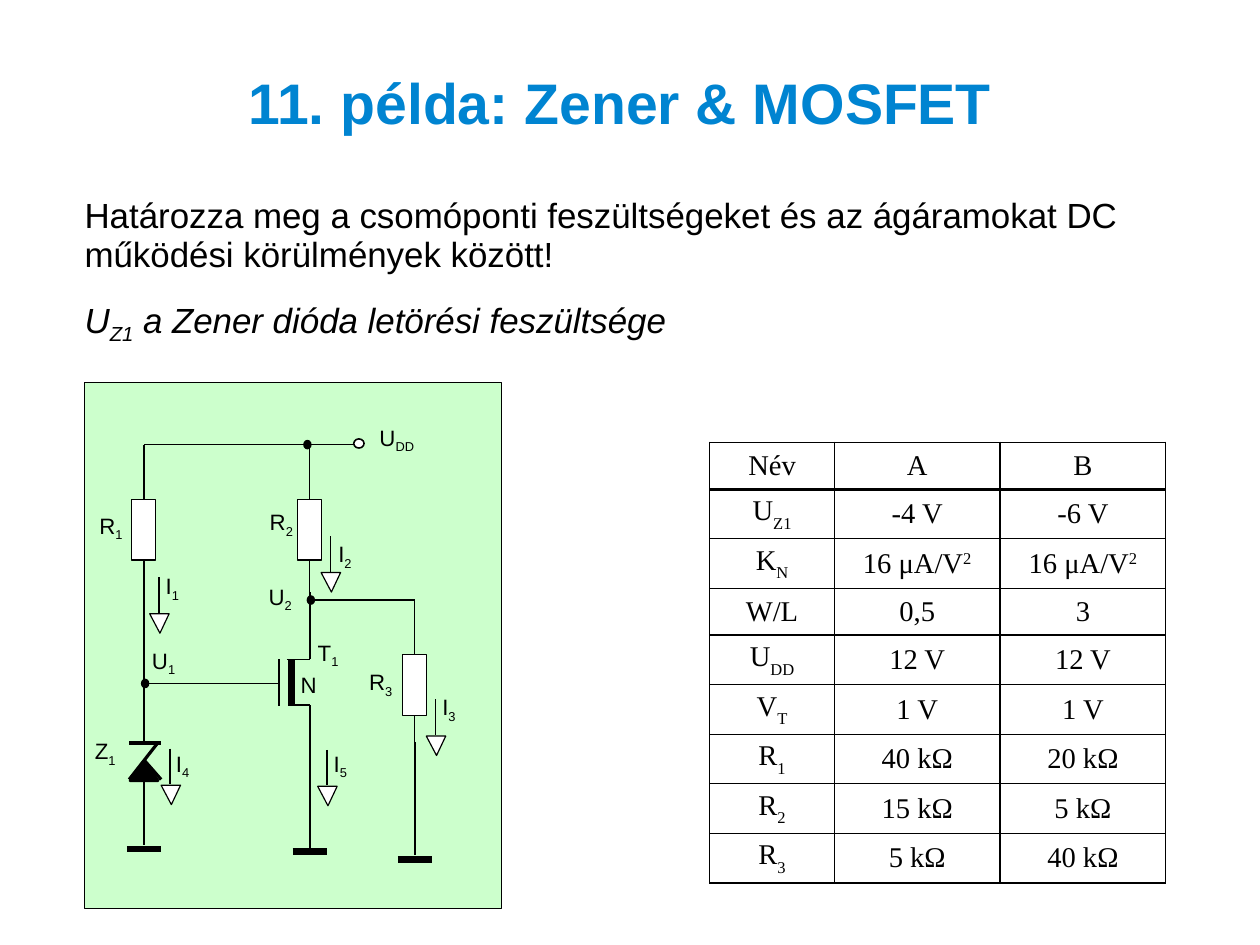
import lxml.etree
import pptx
import pptx.dml.color
import pptx.enum.shapes
import pptx.enum.text
import pptx.oxml.ns
import pptx.util

Inches = pptx.util.Inches
Pt = pptx.util.Pt
SHAPES = pptx.enum.shapes.MSO_SHAPE
CENTER = pptx.enum.text.PP_ALIGN.CENTER
MIDDLE = pptx.enum.text.MSO_ANCHOR.MIDDLE
BLACK, WHITE = "000000", "FFFFFF"


def color(hex_text):
    return pptx.dml.color.RGBColor.from_string(hex_text)


def write(paragraph, markup, size, font="Arial", ink=BLACK, shift=25):
    """Parts are split by |; a leading _ lowers a part and ^ raises it."""
    for part in markup.split("|"):
        run = paragraph.add_run()
        run.text = part.lstrip("_^")
        run.font.size = Pt(size)
        run.font.name = font
        run.font.color.rgb = color(ink)
        if part[0] in "_^":
            percent = -shift if part[0] == "_" else shift
            run.font._element.set("baseline", str(percent * 1000))


def set_insets(text_frame, inset, top=None):
    text_frame.margin_left = text_frame.margin_right = Inches(inset)
    text_frame.margin_bottom = Inches(inset)
    text_frame.margin_top = Inches(inset if top is None else top)
    text_frame.word_wrap = True


def paint(shape, fill, weight):
    shape.shadow.inherit = False
    shape.fill.solid()
    shape.fill.fore_color.rgb = color(fill)
    shape.line.color.rgb = color(BLACK)
    shape.line.width = Pt(weight)


def add_title(slide, left, top, width, height):
    title = slide.shapes.title
    title.left, title.top = Inches(left), Inches(top)
    title.width, title.height = Inches(width), Inches(height)
    set_insets(title.text_frame, 0)
    title.text_frame.vertical_anchor = MIDDLE
    paragraph = title.text_frame.paragraphs[0]
    paragraph.alignment = CENTER
    paragraph.line_spacing = 0.93
    write(paragraph, "11. példa: Zener & MOSFET", 36, ink="0084D1")
    paragraph.runs[0].font.bold = True


def add_task(slide, left, top, width, height):
    box = slide.shapes.add_textbox(Inches(left), Inches(top), Inches(width), Inches(height))
    frame = box.text_frame
    set_insets(frame, 0, top=0.03)
    question = frame.paragraphs[0]
    write(question, "Határozza meg a csomóponti feszültségeket és az ágáramokat "
                    "DC működési körülmények között!", 22)
    remark = frame.add_paragraph()
    write(remark, "U|_Z1| a Zener dióda letörési feszültsége", 22)
    for run in remark.runs:
        run.font.italic = True
    for paragraph in frame.paragraphs:
        paragraph.line_spacing = 0.93
        paragraph.space_after = Pt(14.2)


def add_circuit(slide, left, top, width, height):
    shapes = slide.shapes

    def block(kind, x, y, w, h, fill, weight):
        shape = shapes.add_shape(kind, Inches(left + x), Inches(top + y), Inches(w), Inches(h))
        paint(shape, fill, weight)

    def wire(x1, y1, x2, y2, weight=1):
        line = shapes.add_connector(pptx.enum.shapes.MSO_CONNECTOR.STRAIGHT,
                                    Inches(left + x1), Inches(top + y1),
                                    Inches(left + x2), Inches(top + y2))
        line.line.color.rgb = color(BLACK)
        line.line.width = Pt(weight)
        lxml.etree.SubElement(line._element.spPr, pptx.oxml.ns.qn("a:effectLst"))

    def triangle(points, fill, weight):
        corners = [(Inches(left + x), Inches(top + y)) for x, y in points]
        builder = shapes.build_freeform(*corners[0])
        builder.add_line_segments(corners[1:], close=True)
        paint(builder.convert_to_shape(), fill, weight)

    def node(x, y, w=0.06, h=0.07, fill=BLACK):
        block(SHAPES.OVAL, x - w / 2, y - h / 2, w, h, fill, 1)

    block(SHAPES.RECTANGLE, 0, 0, width, height, "CCFFCC", 0.75)

    # Supply rail and the three branches
    branch_1, branch_2, branch_3 = 0.52, 1.97, 2.89
    rail, drain_node, gate = 0.54, 1.9, 2.63
    drain, source = 2.42, 2.82
    wire(branch_1, rail, 2.41, rail)
    wire(branch_1, rail, branch_1, 1.95, 0.75)
    wire(branch_1, 1.95, branch_1, 3.14)
    wire(branch_1, 3.49, branch_1, 4.04)
    wire(branch_2, rail, branch_2, 1.83, 0.75)
    wire(branch_2, 1.83, branch_2, drain)
    wire(branch_2, source, branch_2, 4.07)
    wire(branch_2, drain_node, branch_3, drain_node)
    wire(branch_3, drain_node, branch_3, 3.14, 0.75)
    wire(branch_3, 3.14, branch_3, 4.13)

    # MOSFET
    wire(branch_1, gate, 1.7, gate)
    wire(1.7, drain, 1.7, source + 0.01)
    wire(1.81, drain, 1.81, source + 0.01, 4)
    wire(1.77, drain, branch_2, drain)
    wire(1.81, source, branch_2, source)

    # Zener diode
    wire(0.39, 3.15, 0.67, 3.15, 2)
    wire(0.64, 3.15, 0.39, 3.47, 2)
    wire(0.53, 3.31, 0.67, 3.47, 2)
    triangle([(branch_1, 3.31), (0.64, 3.48), (0.4, 3.48)], BLACK, 2)

    # Grounds, resistors, nodes and supply terminal
    for x, y in [(branch_1, 4.08), (branch_2, 4.1), (branch_3, 4.17)]:
        wire(x - 0.15, y, x + 0.15, y, 4)
    for x, y in [(branch_1, 1.02), (branch_2, 1.02), (branch_3, 2.38)]:
        block(SHAPES.RECTANGLE, x - 0.11, y, 0.21, 0.53, WHITE, 0.75)
    for x, y in [(branch_2 - 0.02, rail), (branch_2 + 0.01, drain_node), (branch_1 + 0.01, gate)]:
        node(x, y)
    node(2.4, 0.53, 0.09, 0.08, WHITE)

    # Current arrows
    for x, y in [(0.65, 1.7), (2.15, 1.34), (3.07, 2.77), (0.75, 3.2), (2.12, 3.21)]:
        wire(x, y, x, y + 0.31)
        triangle([(x - 0.08, y + 0.32), (x + 0.09, y + 0.32), (x + 0.01, y + 0.49)], WHITE, 0.75)

    # Labels
    labels = [("U|_DD", 2.57, 0.35), ("U|_1", 0.58, 2.3), ("U|_2", 1.6, 1.74),
              ("R|_1", 0.12, 1.12), ("R|_2", 1.61, 1.09), ("R|_3", 2.48, 2.49),
              ("I|_1", 0.7, 1.65), ("I|_2", 2.21, 1.37), ("I|_3", 3.12, 2.71),
              ("I|_4", 0.79, 3.2), ("I|_5", 2.17, 3.2),
              ("T|_1", 2.03, 2.23), ("N", 1.88, 2.51), ("Z|_1", 0.08, 3.09)]
    for markup, x, y in labels:
        box = shapes.add_textbox(Inches(left + x), Inches(top + y), Inches(0.47), Inches(0.32))
        set_insets(box.text_frame, 0.01)
        write(box.text_frame.paragraphs[0], markup, 14)


def set_borders(cell, weights):
    properties = cell._tc.get_or_add_tcPr()
    for side, weight in weights.items():
        line = lxml.etree.SubElement(properties, pptx.oxml.ns.qn("a:ln" + side), w=str(Pt(weight)))
        fill = lxml.etree.SubElement(line, pptx.oxml.ns.qn("a:solidFill"))
        lxml.etree.SubElement(fill, pptx.oxml.ns.qn("a:srgbClr"), val=BLACK)


def add_values(slide, left, top, width, height):
    rows = [("Név", "A", "B"),
            ("U|_Z1", "-4 V", "-6 V"),
            ("K|_N", "16 μA/V|^2", "16 μA/V|^2"),
            ("W/L", "0,5", "3"),
            ("U|_DD", "12 V", "12 V"),
            ("V|_T", "1 V", "1 V"),
            ("R|_1", "40 kΩ", "20 kΩ"),
            ("R|_2", "15 kΩ", "5 kΩ"),
            ("R|_3", "5 kΩ", "40 kΩ")]
    frame = slide.shapes.add_table(len(rows), 3, Inches(left), Inches(top),
                                   Inches(width), Inches(height))
    table = frame.table
    table.first_row = table.horz_banding = False
    for column, column_width in zip(table.columns, (1.09, 1.45, 1.45)):
        column.width = Inches(column_width)
    for row_index, row in enumerate(rows):
        for column_index, markup in enumerate(row):
            cell = table.cell(row_index, column_index)
            set_borders(cell, {"L": 1, "R": 1, "T": 2 if row_index == 1 else 1,
                               "B": 2 if row_index == 0 else 1})
            cell.fill.solid()
            cell.fill.fore_color.rgb = color(WHITE)
            cell.margin_left = cell.margin_right = Inches(0.11)
            cell.margin_top = cell.margin_bottom = Inches(0.04)
            cell.vertical_anchor = MIDDLE
            paragraph = cell.text_frame.paragraphs[0]
            paragraph.alignment = CENTER
            write(paragraph, markup, 18, "Times New Roman", shift=30)


def main():
    presentation = pptx.Presentation()
    # A page of 28 by 21 centimetres
    presentation.slide_width = Inches(28 / 2.54)
    presentation.slide_height = Inches(21 / 2.54)
    slide = presentation.slides.add_slide(presentation.slide_layouts[5])
    add_title(slide, 0.74, 0.23, 9.37, 1.38)
    add_task(slide, 0.74, 1.7, 9.55, 1.48)
    add_circuit(slide, 0.74, 3.35, 3.65, 4.6)
    add_values(slide, 6.21, 3.87, 3.99, 3.69)
    presentation.save("out.pptx")


if __name__ == "__main__":
    main()
